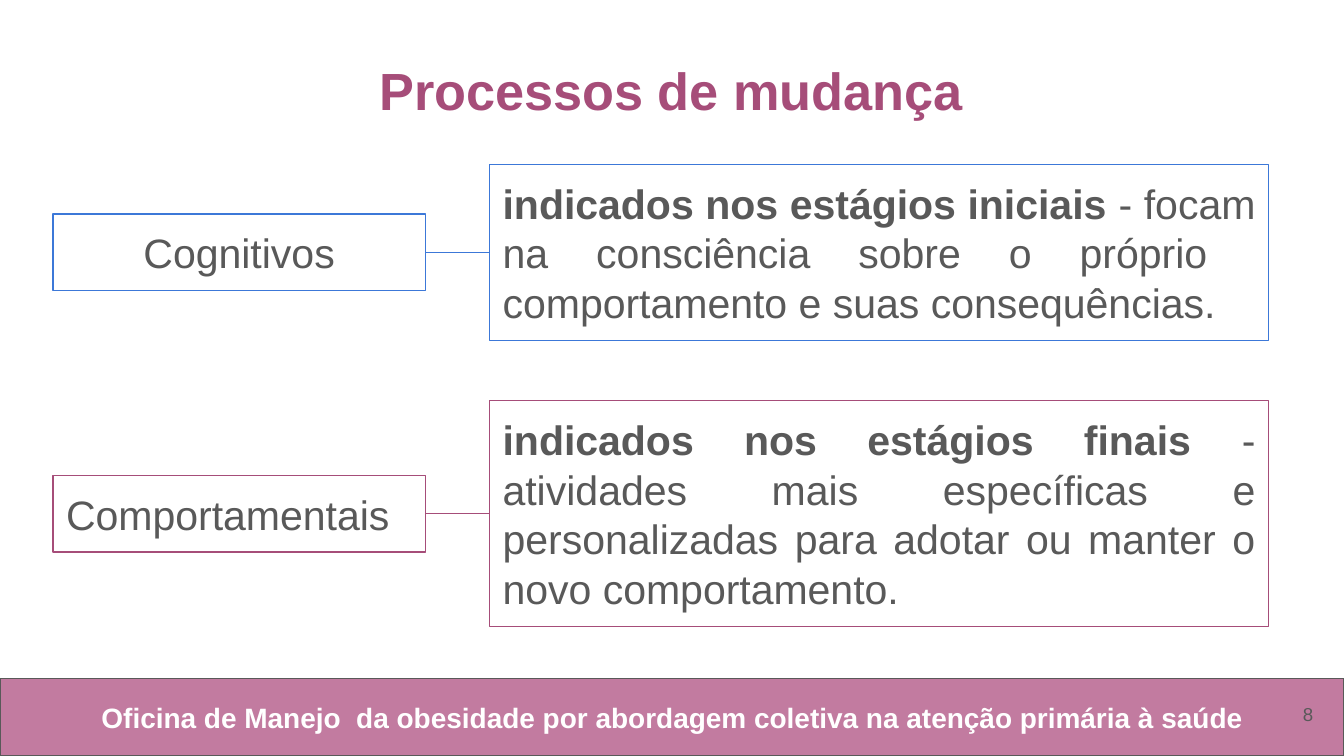
"""Build the slide on cognitive and behavioural processes of change."""
from dataclasses import dataclass

from pptx import Presentation
from pptx.dml.color import RGBColor
from pptx.enum import shapes, text
from pptx.oxml.ns import qn
from pptx.util import Cm, Pt


@dataclass(frozen=True)
class Theme:
    font: str = "Arial"
    blue: str = "3C78D8"
    plum: str = "A64D79"
    pink: str = "C27BA0"
    grey: str = "595959"
    white: str = "FFFFFF"
    title_size: int = 28
    body_size: int = 22
    footer_size: int = 15
    number_size: int = 10
    body_spacing: float = 26.5
    line_width: float = 0.75


theme = Theme()
align = text.PP_ALIGN


def write(shape, parts, size, color, alignment, bold=None, spacing=None, wrap=True):
    frame = shape.text_frame
    frame.word_wrap = wrap
    frame.auto_size = text.MSO_AUTO_SIZE.NONE
    frame.vertical_anchor = text.MSO_ANCHOR.MIDDLE
    frame.margin_left = frame.margin_right = Cm(0.25)
    frame.margin_top = frame.margin_bottom = Cm(0.25)
    paragraph = frame.paragraphs[0]
    paragraph.alignment = alignment
    if spacing:
        paragraph.line_spacing = Pt(spacing)
    for wording, emphasis in parts:
        run = paragraph.add_run()
        run.text = wording
        if emphasis is not None:
            run.font.bold = emphasis
    paragraph.font.name = theme.font
    paragraph.font.size = Pt(size)
    paragraph.font.bold = bold
    paragraph.font.color.rgb = RGBColor.from_string(color)


def add_box(left, top, width, height, line_color, fill_color=None):
    box = slide.shapes.add_shape(
        shapes.MSO_SHAPE.RECTANGLE, Cm(left), Cm(top), Cm(width), Cm(height)
    )
    box.shadow.inherit = False
    if fill_color:
        box.fill.solid()
        box.fill.fore_color.rgb = RGBColor.from_string(fill_color)
    else:
        box.fill.background()
    box.line.color.rgb = RGBColor.from_string(line_color)
    box.line.width = Pt(theme.line_width)
    return box


presentation = Presentation()
presentation.slide_width = Cm(25.4)
presentation.slide_height = Cm(14.29)
slide = presentation.slides.add_slide(presentation.slide_layouts[5])

add_box(0, 12.83, 25.4, 1.46, theme.grey, theme.pink)
footer = slide.shapes.add_textbox(Cm(0.86), Cm(12.98), Cm(23.7), Cm(1.14))
write(
    footer,
    [("Oficina de Manejo  da obesidade por abordagem coletiva na atenção primária à saúde", None)],
    theme.footer_size, theme.white, align.CENTER, bold=True,
)

title = slide.shapes.title
title.left, title.top, title.width, title.height = Cm(6.9), Cm(0.9), Cm(11.56), Cm(1.6)
write(
    title, [("Processos de mudança", None)],
    theme.title_size, theme.plum, align.CENTER, bold=True, wrap=False,
)

label_left, label_width, label_height = 1, 7.04, 1.45
detail_left, detail_width = 9.25, 14.73
processes = [
    ("Cognitivos", align.CENTER, theme.blue, 4.77, 3.33,
     "indicados nos estágios iniciais",
     " - focam na consciência sobre o próprio  comportamento e suas consequências."),
    ("Comportamentais", align.LEFT, theme.plum, 9.71, 4.27,
     "indicados nos estágios finais",
     " - atividades mais específicas e personalizadas para adotar ou manter o novo comportamento."),
]

for name, alignment, color, middle, detail_height, stage, description in processes:
    label = add_box(label_left, middle - label_height / 2, label_width, label_height, color)
    write(label, [(name, None)], theme.body_size, theme.grey, alignment,
          spacing=theme.body_spacing)
    detail = add_box(detail_left, middle - detail_height / 2, detail_width, detail_height, color)
    write(detail, [(stage, True), (description, False)], theme.body_size, theme.grey,
          align.JUSTIFY, spacing=theme.body_spacing)
    connector = slide.shapes.add_connector(
        shapes.MSO_CONNECTOR.STRAIGHT,
        Cm(label_left + label_width), Cm(middle), Cm(detail_left), Cm(middle),
    )
    connector.line.color.rgb = RGBColor.from_string(color)
    connector.line.width = Pt(theme.line_width)
    properties = connector.element.spPr
    properties.append(properties.makeelement(qn("a:effectLst"), {}))

number = slide.shapes.add_textbox(Cm(23.55), Cm(12.95), Cm(1.52), Cm(1.09))
write(number, [("8", None)], theme.number_size, theme.grey, align.RIGHT)

presentation.save("out.pptx")
